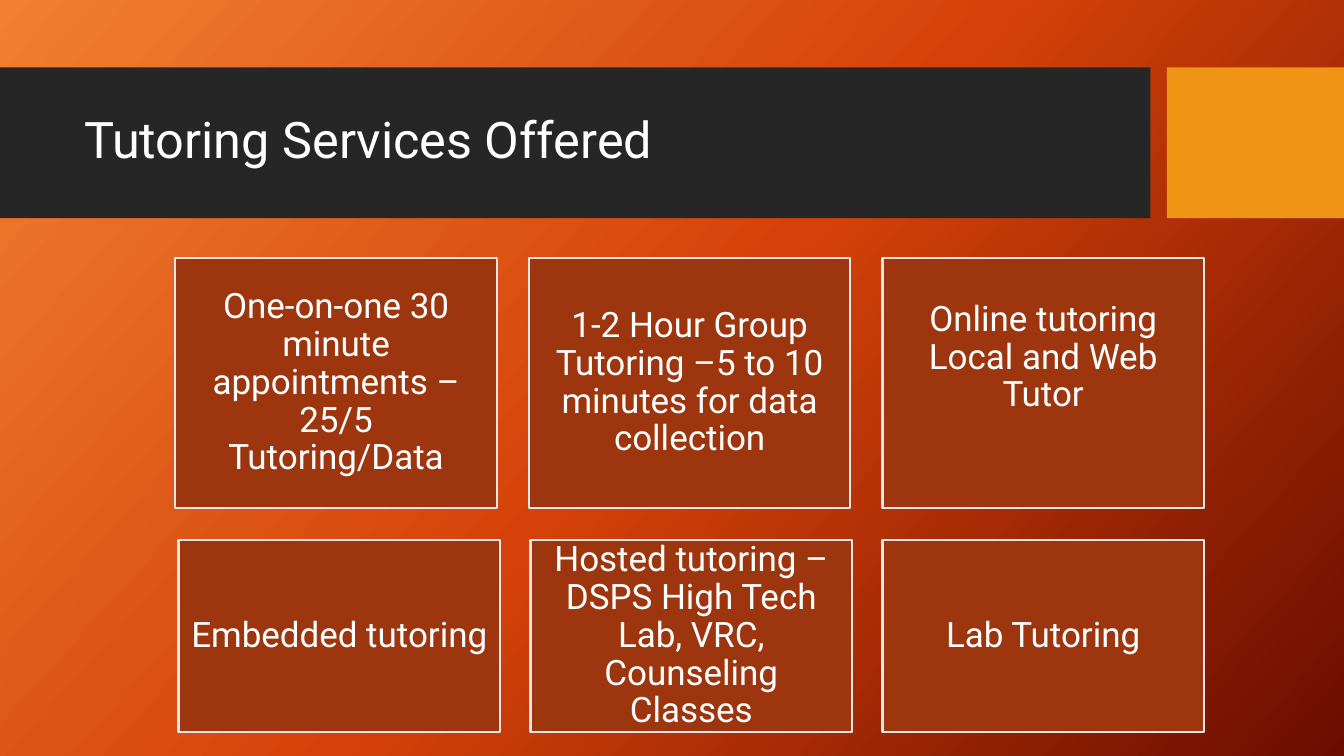
"""Build the slide that lists the tutoring services on offer."""
from copy import deepcopy
from dataclasses import dataclass

from pptx import Presentation
from pptx import util as u
from pptx.dml.color import RGBColor
from pptx.enum import shapes, text


@dataclass(frozen=True)
class Theme:
    font: str = "Roboto"
    title_size: int = 36
    card_size: int = 25
    white: str = "FFFFFF"
    banner: str = "262626"
    accent: str = "F09415"
    card: str = "9D360E"
    card_line: str = "E7E6E6"
    gradient: tuple = ((0, "F18031"), (0.5, "D54209"), (1, "6A0D00"))


theme = Theme()


def add_box(left, top, width, height, fill, line=None):
    shape = slide.shapes.add_shape(
        shapes.MSO_SHAPE.RECTANGLE, u.Cm(left), u.Cm(top), u.Cm(width), u.Cm(height))
    shape.shadow.inherit = False
    shape.fill.solid()
    shape.fill.fore_color.rgb = RGBColor.from_string(fill)
    if line:
        shape.line.color.rgb = RGBColor.from_string(line)
        shape.line.width = u.Pt(1.5)
    else:
        shape.line.fill.background()
    return shape


def write(shape, wording, size, alignment):
    frame = shape.text_frame
    frame.word_wrap = True
    frame.vertical_anchor = text.MSO_ANCHOR.MIDDLE
    frame.text = wording
    paragraph = frame.paragraphs[0]
    paragraph.alignment = alignment
    paragraph.line_spacing = 0.9
    for run in paragraph.runs:
        run.font.name = theme.font
        run.font.size = u.Pt(size)
        run.font.color.rgb = RGBColor.from_string(theme.white)
    return frame


presentation = Presentation()
presentation.slide_width = u.Cm(33.87)
presentation.slide_height = u.Cm(19.05)
slide = presentation.slides.add_slide(presentation.slide_layouts[6])

background = slide.background.fill
background.gradient()
background.gradient_angle = 318
stop_list = slide.element.xpath(".//a:gsLst")[0]
stop_list.append(deepcopy(stop_list[0]))
for stop, (position, color) in zip(background.gradient_stops, theme.gradient):
    stop.position = position
    stop.color.rgb = RGBColor.from_string(color)

add_box(0, 1.7, 28.99, 3.8, theme.banner)
add_box(29.41, 1.7, 4.46, 3.8, theme.accent)
title = slide.shapes.add_textbox(u.Cm(1.88), u.Cm(2.08), u.Cm(26.7), u.Cm(3))
write(title, "Tutoring Services Offered", theme.title_size, text.PP_ALIGN.LEFT)

card_width = 8.1
margin = 0.25
raised_margin = 1.52
rows = [
    (4.42, 8.91, 6.5, 6.3, [
        ("One-on-one 30 minute appointments – 25/5\vTutoring/Data", margin),
        ("1-2 Hour Group Tutoring –5 to 10 minutes for data collection", margin),
        ("Online tutoring Local and Web Tutor", raised_margin),
    ]),
    (4.5, 8.87, 13.6, 4.85, [
        ("Embedded tutoring", margin),
        ("Hosted tutoring – DSPS High Tech Lab, VRC, Counseling Classes", margin),
        ("Lab Tutoring", margin),
    ]),
]
for left, pitch, top, height, services in rows:
    for column, (service, bottom_margin) in enumerate(services):
        card = add_box(left + column * pitch, top, card_width, height,
                       theme.card, theme.card_line)
        frame = write(card, service, theme.card_size, text.PP_ALIGN.CENTER)
        frame.margin_left = frame.margin_right = frame.margin_top = u.Cm(margin)
        frame.margin_bottom = u.Cm(bottom_margin)

presentation.save("out.pptx")
